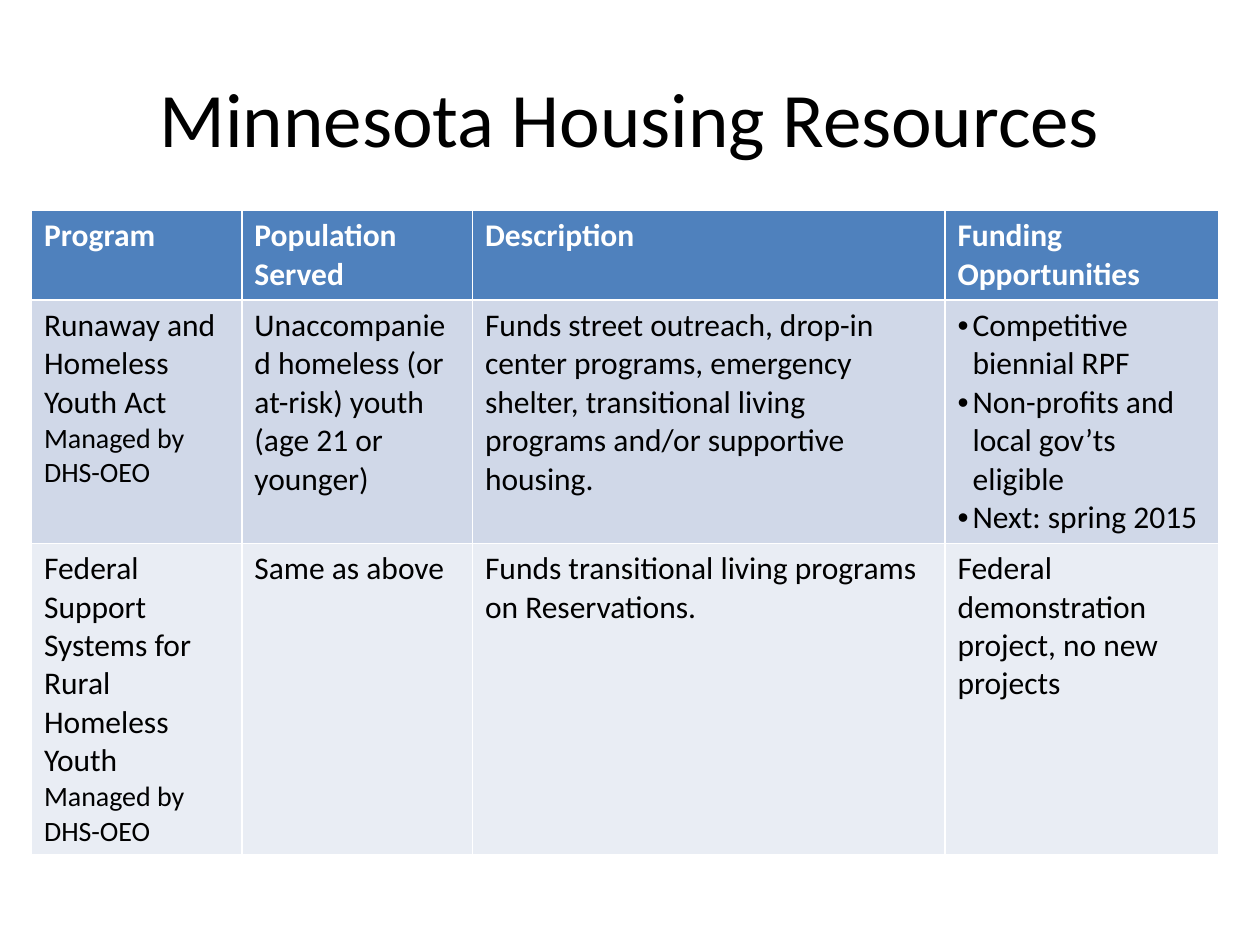
from dataclasses import dataclass

from pptx import Presentation
from pptx.dml.color import RGBColor
from pptx.enum.text import MSO_ANCHOR, PP_ALIGN
from pptx.oxml.ns import qn
from pptx.util import Inches, Pt

CENTER = PP_ALIGN.CENTER
MIDDLE = MSO_ANCHOR.MIDDLE
TITLE_ONLY = 5


@dataclass(frozen=True)
class Theme:
    font: str = "Calibri"
    title_size: int = 44
    body_size: int = 18
    note_size: int = 16
    dark: str = "000000"
    light: str = "FFFFFF"
    row_fills: tuple = ("4F81BD", "D0D8E8", "E9EDF4")


theme = Theme()
MANAGER = "Managed by DHS-OEO"
BULLET = "•"
COLUMN_WIDTHS = (1.67, 1.83, 3.75, 2.17)
ROW_HEIGHTS = (0.67, 1.92, 2.44)
ROWS = [
    ["Program", "Population Served", "Description", "Funding Opportunities"],
    [
        f"Runaway and Homeless Youth Act\n{MANAGER}",
        "Unaccompanied homeless (or at-risk) youth (age 21 or younger)",
        "Funds street outreach, drop-in center programs, emergency shelter, "
        "transitional living programs and/or supportive housing.",
        "•Competitive biennial RPF\n•Non-profits and local gov’ts eligible\n"
        "•Next: spring 2015",
    ],
    [
        f"Federal Support Systems for Rural Homeless Youth\n{MANAGER}",
        "Same as above",
        "Funds transitional living programs on Reservations.",
        "Federal demonstration project, no new projects",
    ],
]


def format_runs(para, size, color, bold=False):
    for span in para.runs:
        span.font.name = theme.font
        span.font.size = Pt(size)
        span.font.bold = bold
        span.font.color.rgb = RGBColor.from_string(color)


def add_bullet(para):
    """Give the paragraph a real bullet with a narrow hanging indent."""
    properties = para._p.get_or_add_pPr()
    properties.set("marL", str(Inches(0.12)))
    properties.set("indent", str(-Inches(0.12)))
    font = properties.makeelement(qn("a:buFont"), {"typeface": "Arial"})
    mark = properties.makeelement(qn("a:buChar"), {"char": BULLET})
    properties.extend([font, mark])


deck = Presentation()
deck.slide_width, deck.slide_height = Inches(10), Inches(7.5)
page = deck.slides.add_slide(deck.slide_layouts[TITLE_ONLY])

title = page.shapes.title
title.left, title.top = int(deck.slide_width * 0.05), int(deck.slide_height * 0.04)
title.width, title.height = int(deck.slide_width * 0.9), Inches(1.25)
title.text_frame.text = "Minnesota Housing Resources"
title.text_frame.vertical_anchor = MIDDLE
title.text_frame.paragraphs[0].alignment = CENTER
format_runs(title.text_frame.paragraphs[0], theme.title_size, theme.dark)

table = page.shapes.add_table(
    len(ROWS), len(COLUMN_WIDTHS), Inches(0.25), Inches(1.67),
    Inches(sum(COLUMN_WIDTHS)), Inches(sum(ROW_HEIGHTS)),
).table
for column, width in zip(table.columns, COLUMN_WIDTHS):
    column.width = Inches(width)

for row_index, (row, height) in enumerate(zip(table.rows, ROW_HEIGHTS)):
    row.height = Inches(height)
    is_header = row_index == 0
    color = theme.light if is_header else theme.dark
    for cell, text in zip(row.cells, ROWS[row_index]):
        cell.fill.solid()
        cell.fill.fore_color.rgb = RGBColor.from_string(theme.row_fills[row_index])
        cell.text_frame.text = text.replace(BULLET, "")
        for para, line in zip(cell.text_frame.paragraphs, text.split("\n")):
            size = theme.note_size if line == MANAGER else theme.body_size
            format_runs(para, size, color, is_header)
            if line.startswith(BULLET):
                add_bullet(para)

deck.save("out.pptx")
